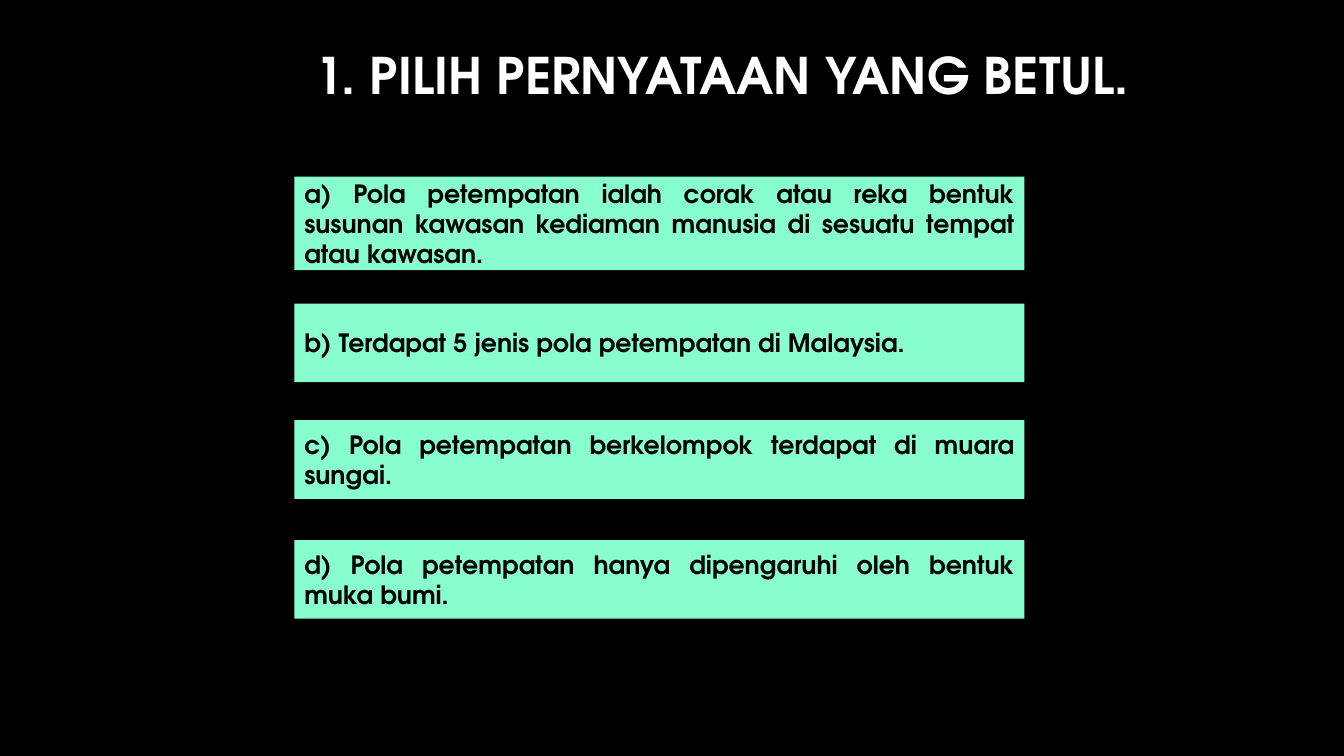
from pptx import Presentation
from pptx import util as u
from pptx.dml.color import RGBColor
from pptx.enum import shapes, text

COLORS = {"background": "000000", "title": "FFFFFF", "answer": "88FECE", "answer text": "000000"}
TITLE = "1. PILIH PERNYATAAN YANG BETUL."
# Each answer: top and height in cm, wording
ANSWERS = [
    (4.45, 2.36, "a) Pola petempatan ialah corak atau reka bentuk susunan kawasan "
                 "kediaman manusia di sesuatu tempat atau kawasan."),
    (7.65, 1.98, "b) Terdapat 5 jenis pola petempatan di Malaysia."),
    (10.59, 1.98, "c) Pola petempatan berkelompok terdapat di muara sungai."),
    (13.61, 1.98, "d) Pola petempatan hanya dipengaruhi oleh bentuk muka bumi."),
]


class QuizSlide:
    font_name = "TeX Gyre Adventor"

    def __init__(self, deck):
        self.page = deck.slides.add_slide(deck.slide_layouts[5])
        fill = self.page.background.fill
        fill.solid()
        fill.fore_color.rgb = self.color("background")

    def color(self, name):
        return RGBColor.from_string(COLORS[name])

    def set_text(self, shape, wording, size, color, align):
        frame = shape.text_frame
        frame.text = wording
        frame.word_wrap = True
        frame.auto_size = text.MSO_AUTO_SIZE.NONE
        frame.vertical_anchor = text.MSO_ANCHOR.MIDDLE
        para = frame.paragraphs[0]
        para.alignment = align
        for span in para.runs:
            span.font.name = self.font_name
            span.font.size = u.Pt(size)
            span.font.bold = True
            span.font.color.rgb = self.color(color)
        return para

    def title(self, wording):
        box = self.page.shapes.title
        box.left, box.top, box.width, box.height = map(u.Cm, (2.33, 0.36, 29.21, 3.2))
        para = self.set_text(box, wording, 36, "title", text.PP_ALIGN.CENTER)
        para.line_spacing = 0.9
        # The wider left inset moves the heading right of centre
        box.text_frame.margin_left = u.Cm(2.79)

    def answer(self, top, height, wording):
        box = self.page.shapes.add_shape(
            shapes.MSO_SHAPE.RECTANGLE, u.Cm(7.42), u.Cm(top), u.Cm(18.4), u.Cm(height))
        box.shadow.inherit = False
        box.fill.solid()
        box.fill.fore_color.rgb = self.color("answer")
        box.line.fill.background()
        self.set_text(box, wording, 18, "answer text", text.PP_ALIGN.JUSTIFY)


def main():
    deck = Presentation()
    deck.slide_width, deck.slide_height = u.Cm(33.87), u.Cm(19.05)
    quiz = QuizSlide(deck)

    # Question
    quiz.title(TITLE)

    # Answer choices
    for top, height, wording in ANSWERS:
        quiz.answer(top, height, wording)

    deck.save("out.pptx")


if __name__ == "__main__":
    main()
